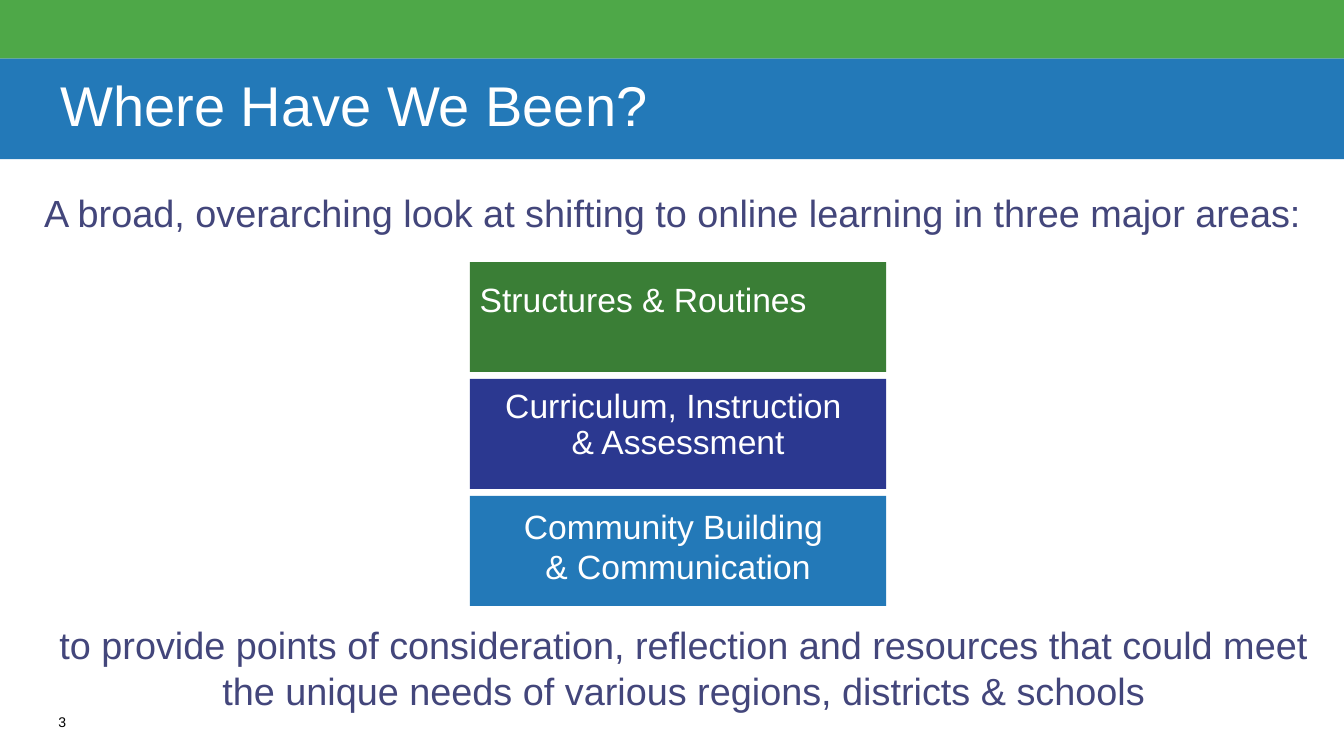
import pptx
import pptx.util
import pptx.dml.color
import pptx.enum.shapes
import pptx.enum.text

Inches = pptx.util.Inches
PP_ALIGN = pptx.enum.text.PP_ALIGN
ANCHOR = pptx.enum.text.MSO_ANCHOR
COLORS = {
    "band": "4EA848",
    "blue": "2379B8",
    "green": "3A7E36",
    "navy": "2B3890",
    "violet": "43467B",
    "white": "FFFFFF",
    "black": "000000",
}
WIDTH, HEIGHT = 13.33, 7.5
BAND_HEIGHT = 0.58
AREA_LEFT, AREA_TOP, AREA_WIDTH, AREA_HEIGHT = 4.66, 2.6, 4.13, 1.09
AREA_PITCH = 1.16


def paint(shape, color):
    shape.fill.solid()
    shape.fill.fore_color.rgb = pptx.dml.color.RGBColor.from_string(COLORS[color])
    shape.line.fill.background()


def write(shape, text, size, color, align=PP_ALIGN.CENTER, anchor=ANCHOR.TOP,
          insets=(0.1, 0.1), line_spacing=1.0):
    """Fill a shape with one paragraph; insets are (horizontal, vertical) inches."""
    frame = shape.text_frame
    frame.text = text
    frame.word_wrap = True
    frame.auto_size = pptx.enum.text.MSO_AUTO_SIZE.NONE
    frame.vertical_anchor = anchor
    frame.margin_left = frame.margin_right = Inches(insets[0])
    frame.margin_top = frame.margin_bottom = Inches(insets[1])
    paragraph = frame.paragraphs[0]
    paragraph.alignment = align
    paragraph.line_spacing = line_spacing
    for run in paragraph.runs:
        run.font.name = "Arial"
        run.font.size = pptx.util.Pt(size)
        run.font.color.rgb = pptx.dml.color.RGBColor.from_string(COLORS[color])


presentation = pptx.Presentation()
presentation.slide_width = Inches(WIDTH)
presentation.slide_height = Inches(HEIGHT)
slide = presentation.slides.add_slide(presentation.slide_layouts[5])
RECTANGLE = pptx.enum.shapes.MSO_SHAPE.RECTANGLE

# Header
band = slide.shapes.add_shape(RECTANGLE, 0, 0, Inches(WIDTH), Inches(BAND_HEIGHT))
band.shadow.inherit = False
paint(band, "band")

title = slide.shapes.title
title.left, title.top = 0, Inches(BAND_HEIGHT)
title.width, title.height = Inches(WIDTH), Inches(1)
paint(title, "blue")
write(title, "Where Have We Been?", 40, "white", PP_ALIGN.LEFT, ANCHOR.MIDDLE,
      (0.6, 0), 0.9)

# Three major areas
areas = [
    ("Structures & Routines", "green", PP_ALIGN.LEFT, 0.17, 1.0),
    ("Curriculum, Instruction \v& Assessment", "navy", PP_ALIGN.CENTER, 0.1, 0.9),
    ("Community Building \v& Communication", "blue", PP_ALIGN.CENTER, 0.1, 1.0),
]
for row, (text, color, align, inset, line_spacing) in enumerate(areas):
    area = slide.shapes.add_shape(
        RECTANGLE, Inches(AREA_LEFT), Inches(AREA_TOP + row * AREA_PITCH),
        Inches(AREA_WIDTH), Inches(AREA_HEIGHT))
    area.shadow.inherit = False
    paint(area, color)
    write(area, text, 24, "white", align, insets=(0.1, inset),
          line_spacing=line_spacing)

# Sentence around the areas
sentences = [
    ("A broad, overarching look at shifting to online learning in three major areas:",
     (0.32, 1.78, 12.7, 0.66)),
    ("to provide points of consideration, reflection and resources that could meet "
     "the unique needs of various regions, districts & schools",
     (0.47, 6.07, 12.62, 1.11)),
]
for text, bounds in sentences:
    sentence = slide.shapes.add_textbox(*map(Inches, bounds))
    write(sentence, text, 27, "violet")

slide_number = slide.shapes.add_textbox(*map(Inches, (0.58, 7.08, 0.42, 0.25)))
write(slide_number, "3", 10, "black", PP_ALIGN.LEFT, insets=(0, 0))

presentation.save("out.pptx")
